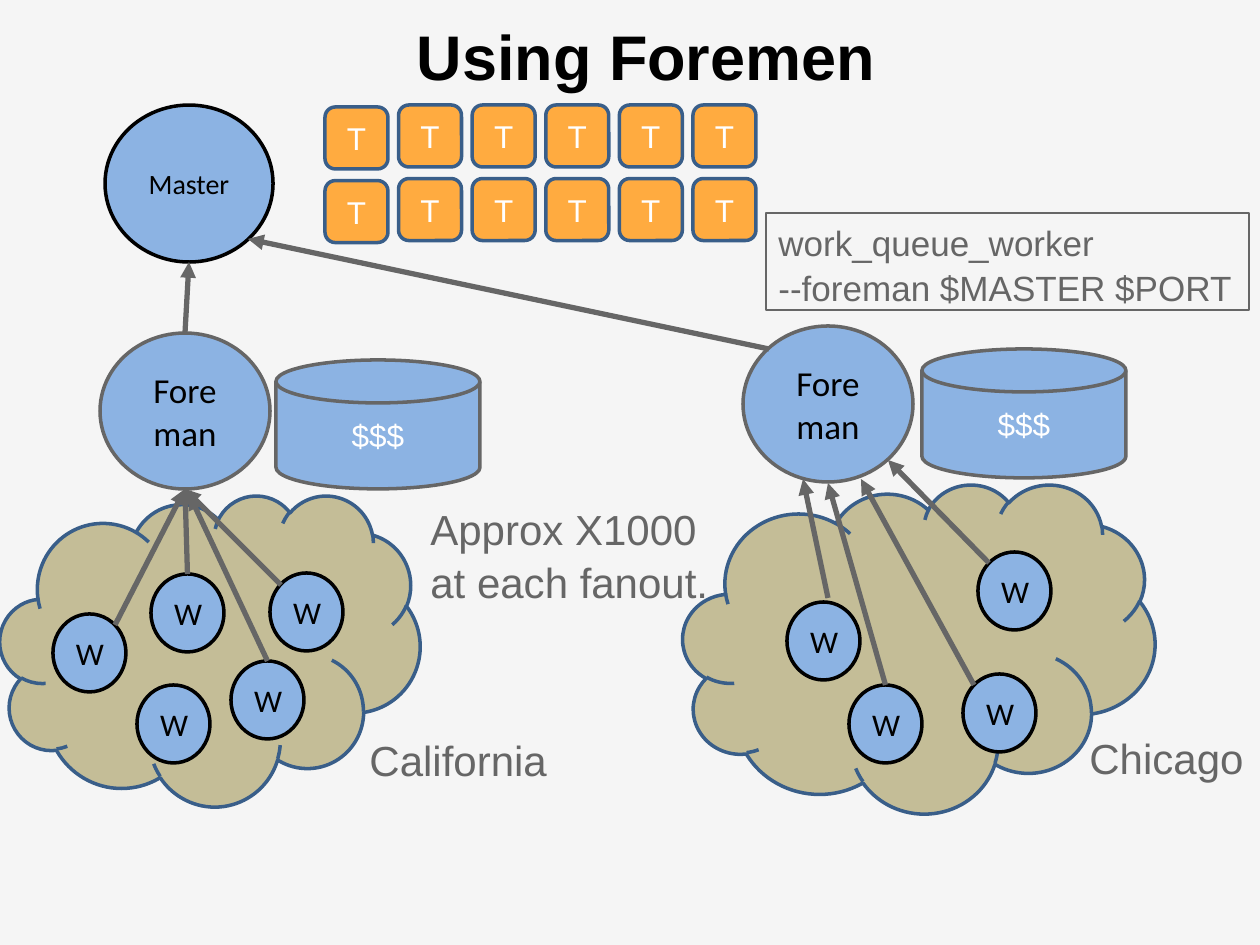
from lxml import etree
from pptx import Presentation
from pptx.dml.color import RGBColor
from pptx.enum.shapes import MSO_CONNECTOR, MSO_SHAPE
from pptx.enum.text import MSO_ANCHOR, PP_ALIGN
from pptx.oxml.ns import qn
from pptx.util import Pt

EMU_PER_PX = 914400 / 126
CLOUD, ELLIPSE, TILE = MSO_SHAPE.CLOUD, MSO_SHAPE.OVAL, MSO_SHAPE.ROUNDED_RECTANGLE
DISK = MSO_SHAPE.FLOWCHART_MAGNETIC_DISK
STRAIGHT = MSO_CONNECTOR.STRAIGHT
LEFT, CENTER = PP_ALIGN.LEFT, PP_ALIGN.CENTER
MIDDLE = MSO_ANCHOR.MIDDLE
TOP_SITE = 0

COLORS = {
    "background": "F5F5F5", "cloud": "C4BD97", "outline": "395E89", "node": "8CB3E3",
    "task": "FFAB40", "gray": "666666", "black": "000000", "white": "FFFFFF",
}
# Text formats: font, size in points, colour, bold
FORMATS = {
    "title": {"name": "Arial", "size": 36, "color": "black", "bold": True},
    "master": {"name": "Calibri", "size": 16, "color": "black"},
    "foreman": {"name": "Calibri", "size": 20, "color": "black"},
    "worker": {"name": "Calibri", "size": 18, "color": "black"},
    "on_shape": {"name": "Arial", "size": 18, "color": "white"},
    "label": {"name": "Arial", "size": 24, "color": "gray"},
    "command": {"name": "Arial", "size": 20, "color": "gray"},
}

TITLE = ("Using Foremen", (95, 11, 1102, 97))
MASTER = ("Master", (105, 105, 168, 157))
COMMAND = ("work_queue_worker\n--foreman $MASTER $PORT", (766, 213, 483, 97))
LABELS = [
    ("Approx X1000\nat each fanout.", (418, 494, 321, 115)),
    ("California", (357, 725, 205, 63)),
    ("Chicago", (1077, 723, 181, 63)),
]
TASK_ROWS, TASK_COLUMNS = 2, 6
TASK_LEFT, TASK_TOP, TASK_PITCH, TASK_SIZE = 325, 105, 73.6, (63, 62)
FIRST_COLUMN_DROP = 2
WORKER_SIZE, FOREMAN_SIZE, DISK_SIZE = (73, 78), (170, 156), (204, 129)

# An arrow starts at the top of a worker (its number) or at a point.
SITES = [
    {
        "cloud": (0, 495, 420, 311),
        "workers": [(53, 614), (151, 574), (231, 661), (137, 685), (270, 573)],
        "arrows": [(1, (185, 489)), (2, (189, 494)),
                   ((281, 585), (185, 489)), ((115, 625), (185, 489))],
        "foreman": (100, 333), "disk": (276, 360),
        "uplink": (None, (189, 262)),
    },
    {
        "cloud": (683, 484, 472, 329),
        "workers": [(787, 602), (963, 674), (849, 685), (978, 552)],
        "arrows": [((828, 598), (803, 479)), ((989, 563), (888, 460)),
                   (2, (828, 483)), ((974, 685), (861, 479))],
        "foreman": (743, 326), "disk": (922, 349),
        "uplink": ((769, 349), (248, 239)),
    },
]


def px(*lengths):
    return [round(length * EMU_PER_PX) for length in lengths]


def rgb(name):
    return RGBColor.from_string(COLORS[name])


def write(shape, text, format_name, alignment):
    frame = shape.text_frame
    frame.word_wrap = True
    frame.text = text
    style = FORMATS[format_name]
    for paragraph in frame.paragraphs:
        paragraph.alignment = alignment
        if alignment == LEFT:
            paragraph.line_spacing = 1.06
        for run in paragraph.runs:
            for key, value in style.items():
                if key == "color":
                    run.font.color.rgb = rgb(value)
                else:
                    setattr(run.font, key, Pt(value) if key == "size" else value)


def add_text(slide, text, box, format_name, alignment=LEFT):
    shape = slide.shapes.add_textbox(*px(*box))
    write(shape, text, format_name, alignment)
    return shape


def add_node(slide, kind, box, fill, line, text="", format_name="on_shape"):
    shape = slide.shapes.add_shape(kind, *px(*box))
    shape.shadow.inherit = False
    shape.fill.solid()
    shape.fill.fore_color.rgb = rgb(fill)
    shape.line.color.rgb = rgb(line)
    shape.line.width = Pt(2)
    if text:
        write(shape, text, format_name, CENTER)
        shape.text_frame.vertical_anchor = MIDDLE
    return shape


def add_arrow(slide, start, end, start_shape=None):
    """Draw from the top of start_shape if given, else from the start point."""
    connector = slide.shapes.add_connector(STRAIGHT, *px(*(start or end), *end))
    if start_shape is not None:
        connector.begin_connect(start_shape, TOP_SITE)
    connector.line.color.rgb = rgb("gray")
    connector.line.width = Pt(3)
    etree.SubElement(connector.line._get_or_add_ln(), qn("a:tailEnd"), type="triangle")
    etree.SubElement(connector._element.spPr, qn("a:effectLst"))


def add_workers(slide, site):
    workers = [add_node(slide, ELLIPSE, (*place, *WORKER_SIZE), "node", "black", "W", "worker")
               for place in site["workers"]]
    for start, end in site["arrows"]:
        if isinstance(start, int):
            add_arrow(slide, None, end, workers[start])
        else:
            add_arrow(slide, start, end)


def add_foreman(slide, site):
    foreman = add_node(slide, ELLIPSE, (*site["foreman"], *FOREMAN_SIZE),
                       "node", "gray", "Fore man", "foreman")
    start, end = site["uplink"]
    add_arrow(slide, start, end, None if start else foreman)
    add_node(slide, DISK, (*site["disk"], *DISK_SIZE), "node", "gray", "$$$")


def main():
    presentation = Presentation()
    presentation.slide_width, presentation.slide_height = px(1260, 945)
    slide = presentation.slides.add_slide(presentation.slide_layouts[6])
    slide.background.fill.solid()
    slide.background.fill.fore_color.rgb = rgb("background")

    for site in SITES:
        add_node(slide, CLOUD, site["cloud"], "cloud", "outline")
    add_text(slide, *TITLE, "title", CENTER)
    text, box = MASTER
    add_node(slide, ELLIPSE, box, "node", "black", text, "master")

    for row in range(TASK_ROWS):
        for column in range(TASK_COLUMNS):
            left = TASK_LEFT + column * TASK_PITCH
            top = TASK_TOP + row * TASK_PITCH + (FIRST_COLUMN_DROP if column == 0 else 0)
            add_node(slide, TILE, (left, top, *TASK_SIZE), "task", "outline", "T")

    for site in SITES:
        add_workers(slide, site)
    for site in SITES:
        add_foreman(slide, site)

    command = add_text(slide, *COMMAND, "command")
    command.line.color.rgb = rgb("gray")
    command.line.width = Pt(0.75)
    for text, box in LABELS:
        add_text(slide, text, box, "label")
    presentation.save("out.pptx")


if __name__ == "__main__":
    main()
